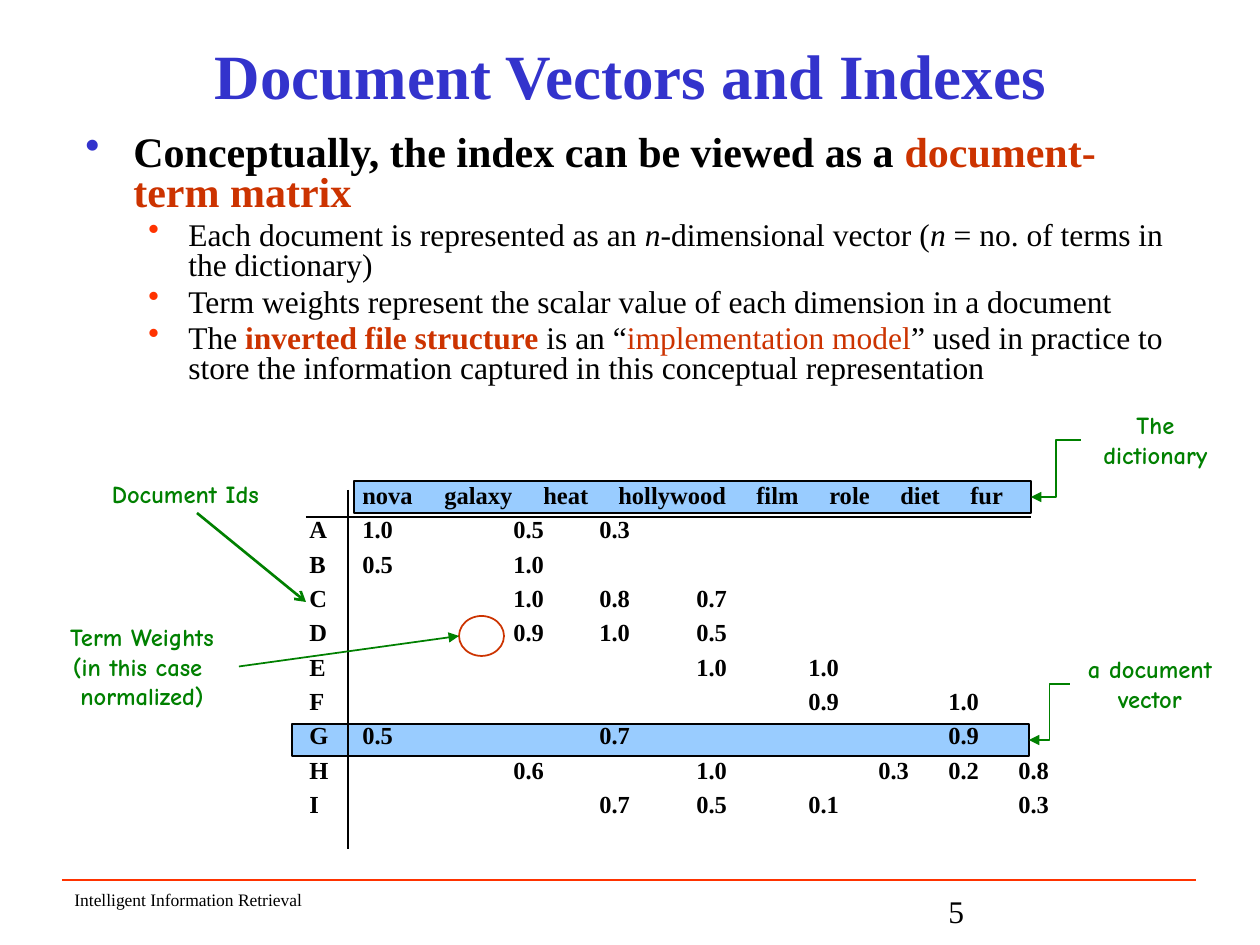
import pptx
import pptx.util
import pptx.dml.color
import pptx.enum.shapes
import pptx.enum.text
import pptx.oxml.ns
import lxml.etree

PX = 914400 // 126
SERIF, HAND = "Times New Roman", "Comic Neue"
COLORS = {"title": "3333CC", "ink": "000000", "accent": "CC3300",
          "rule": "FF3300", "band": "99CCFF", "note": "008000"}
ALIGN = pptx.enum.text.PP_ALIGN
SHAPE = pptx.enum.shapes.MSO_SHAPE
CONNECTOR = pptx.enum.shapes.MSO_CONNECTOR

TERMS = ["nova", "galaxy", "heat", "hollywood", "film", "role", "diet", "fur"]
TERM_STOPS = [53, 135, 234, 309, 447, 520, 591, 661]
WEIGHT_STOPS = [53, 204, 290, 387, 499, 569, 639, 709]
WEIGHTS = {
    "A": {"nova": "1.0", "galaxy": "0.5", "heat": "0.3"},
    "B": {"nova": "0.5", "galaxy": "1.0"},
    "C": {"galaxy": "1.0", "heat": "0.8", "hollywood": "0.7"},
    "D": {"galaxy": "0.9", "heat": "1.0", "hollywood": "0.5"},
    "E": {"hollywood": "1.0", "film": "1.0"},
    "F": {"film": "0.9", "diet": "1.0"},
    "G": {"nova": "0.5", "heat": "0.7", "diet": "0.9"},
    "H": {"galaxy": "0.6", "hollywood": "1.0", "role": "0.3", "diet": "0.2", "fur": "0.8"},
    "I": {"heat": "0.7", "hollywood": "0.5", "film": "0.1", "fur": "0.3"},
}
BULLETS = [
    (0, [("Conceptually, the index can be viewed as a ", "b"),
         ("document-term matrix", "ba")]),
    (1, [("Each document is represented as an ", ""), ("n", "i"),
         ("-dimensional vector (", ""), ("n", "i"),
         (" = no. of terms in the dictionary)", "")]),
    (1, [("Term weights represent the scalar value of each dimension in a document", "")]),
    (1, [("The ", ""), ("inverted file structure", "ba"), (" is an “", ""),
         ("implementation model", "a"),
         ("” used in practice to store the information captured in this "
          "conceptual representation", "")]),
]


def px(n):
    """Turn pixels into EMU."""
    return pptx.util.Emu(n * PX)


def rgb(name):
    """Look up a named colour."""
    return pptx.dml.color.RGBColor.from_string(COLORS[name])


def sub(parent, tag, **attrs):
    """Append a DrawingML element."""
    return lxml.etree.SubElement(parent, pptx.oxml.ns.qn(tag), attrs)


def add_box(s, x, y, w, h):
    """Add an empty wrapping text box."""
    sp = s.shapes.add_textbox(px(x), px(y), px(w), px(h))
    sp.text_frame.word_wrap = True
    return sp


def next_paragraph(tf, first):
    """Return the frame's first paragraph or a new one."""
    return tf.paragraphs[0] if first else tf.add_paragraph()


def add_run(p, text, size, color="ink", font=SERIF, bold=False, italic=False):
    """Add one formatted run."""
    r = p.add_run()
    r.text = text
    r.font.size = pptx.util.Pt(size)
    r.font.name = font
    r.font.bold = bold
    r.font.italic = italic
    r.font.color.rgb = rgb(color)


def add_figure(s, kind, box, line, width, fill=None):
    """Add an outlined shape, filled or hollow."""
    sp = s.shapes.add_shape(kind, *map(px, box))
    sp.shadow.inherit = False
    if fill:
        sp.fill.solid()
        sp.fill.fore_color.rgb = rgb(fill)
    else:
        sp.fill.background()
    sp.line.color.rgb = rgb(line)
    sp.line.width = pptx.util.Pt(width)
    return sp


def add_line(s, x1, y1, x2, y2, color, width, head=None, kind=CONNECTOR.STRAIGHT):
    """Add a connector with an optional arrowhead."""
    c = s.shapes.add_connector(kind, px(x1), px(y1), px(x2), px(y2))
    c.line.color.rgb = rgb(color)
    c.line.width = pptx.util.Pt(width)
    if head:
        sub(c.line._get_or_add_ln(), "a:tailEnd", type=head)
    sub(c._element.spPr, "a:effectLst")
    return c


def add_title(s, x, y, w, h):
    """Place the centred heading."""
    tf = add_box(s, x, y, w, h).text_frame
    tf.vertical_anchor = pptx.enum.text.MSO_ANCHOR.MIDDLE
    p = tf.paragraphs[0]
    p.alignment = ALIGN.CENTER
    add_run(p, "Document Vectors and Indexes", 36, "title", bold=True)


def add_bullets(s, x, y, w, h):
    """Place the two-level bullet list."""
    tf = add_box(s, x, y, w, h).text_frame
    levels = [(24, 48, 48, "title"), (18, 103, 40, "rule")]
    for i, (level, runs) in enumerate(BULLETS):
        size, margin, hang, color = levels[level]
        p = next_paragraph(tf, i == 0)
        p.level = level
        p.line_spacing = 0.8
        p.space_before = pptx.util.Pt(size * 0.2)
        pPr = p._p.get_or_add_pPr()
        pPr.set("marL", str(px(margin)))
        pPr.set("indent", str(px(-hang)))
        sub(sub(pPr, "a:buClr"), "a:srgbClr", val=COLORS[color])
        sub(pPr, "a:buChar", char="•")
        for text, style in runs:
            add_run(p, text, size, "accent" if "a" in style else "ink",
                    bold="b" in style, italic="i" in style)


def add_matrix(s, x, y, w, h):
    """Place the document-term matrix and return its two highlighted bands."""
    bands = [add_figure(s, SHAPE.RECTANGLE, box, "ink", 0.75, "band")
             for box in [(x + 57, y + 7, 677, 32), (x - 5, y + 250, 737, 32)]]
    tf = add_box(s, x, y, w, h).text_frame
    rows = [(TERM_STOPS, ["", *TERMS])]
    for doc, weights in WEIGHTS.items():
        rows.append((WEIGHT_STOPS, [doc, *(weights.get(t, "") for t in TERMS)]))
    for i, (stops, cells) in enumerate(rows):
        p = next_paragraph(tf, i == 0)
        p.space_before = pptx.util.Pt(2.8)
        tabs = sub(p._p.get_or_add_pPr(), "a:tabLst")
        for stop in stops:
            sub(tabs, "a:tab", pos=str(px(stop)), algn="l")
        add_run(p, "\t".join(cells).rstrip("\t"), 14, bold=True)
    add_line(s, x + 9, y + 43, x + 734, y + 43, "ink", 0.75)
    add_line(s, x + 51, y + 16, x + 51, y + 375, "ink", 0.75)
    return bands


def add_note(s, x, y, w, h, lines):
    """Place a centred handwritten label."""
    sp = add_box(s, x, y, w, h)
    for i, line in enumerate(lines):
        p = next_paragraph(sp.text_frame, i == 0)
        p.alignment = ALIGN.CENTER
        add_run(p, line, 14, "note", HAND, bold=True)
    return sp


def add_callouts(s, x, y, bands):
    """Place the labels around the matrix and their arrows."""
    targets = [((x + 1036, y, 149, 72), ["The dictionary"]),
               ((x + 1025, y + 244, 160, 72), ["a document", "vector"])]
    for (box, lines), band in zip(targets, bands):
        note = add_note(s, *box, lines)
        c = add_line(s, 0, 0, 1, 1, "note", 0.75, "triangle", CONNECTOR.ELBOW)
        c.begin_connect(note, 1)
        c.end_connect(band, 3)
    add_note(s, x + 46, y + 69, 189, 41, ["Document Ids"])
    add_line(s, x + 152, y + 109, x + 261, y + 198, "note", 1.5, "arrow")
    note = add_note(s, x, y + 212, 194, 101,
                    ["Term Weights", "(in this case ", "normalized)"])
    add_figure(s, SHAPE.OVAL, (x + 414, y + 212, 45, 40), "accent", 1)
    c = add_line(s, x + 194, y + 262, x + 414, y + 232, "note", 1, "triangle")
    c.begin_connect(note, 3)


def add_footer(s, x, y, w):
    """Place the rule, the course name and the page number."""
    add_line(s, x, y, x + w, y, "rule", 1)
    for left, top, width, text, size in [
            (0, 3, 473, "Intelligent Information Retrieval", 10), (874, 6, 262, "5", 18)]:
        tf = add_box(s, x + left, y + top, width, 32).text_frame
        add_run(tf.paragraphs[0], text, size)


def main():
    """Build and save the slide."""
    prs = pptx.Presentation()
    prs.slide_width, prs.slide_height = px(1260), px(945)
    s = prs.slides.add_slide(prs.slide_layouts[6])
    add_footer(s, 62, 880, 1134)
    add_title(s, 95, 32, 1071, 84)
    add_bullets(s, 73, 129, 1113, 276)
    bands = add_matrix(s, 297, 474, 847, 382)
    add_callouts(s, 45, 404, bands)
    prs.save("out.pptx")


if __name__ == "__main__":
    main()
